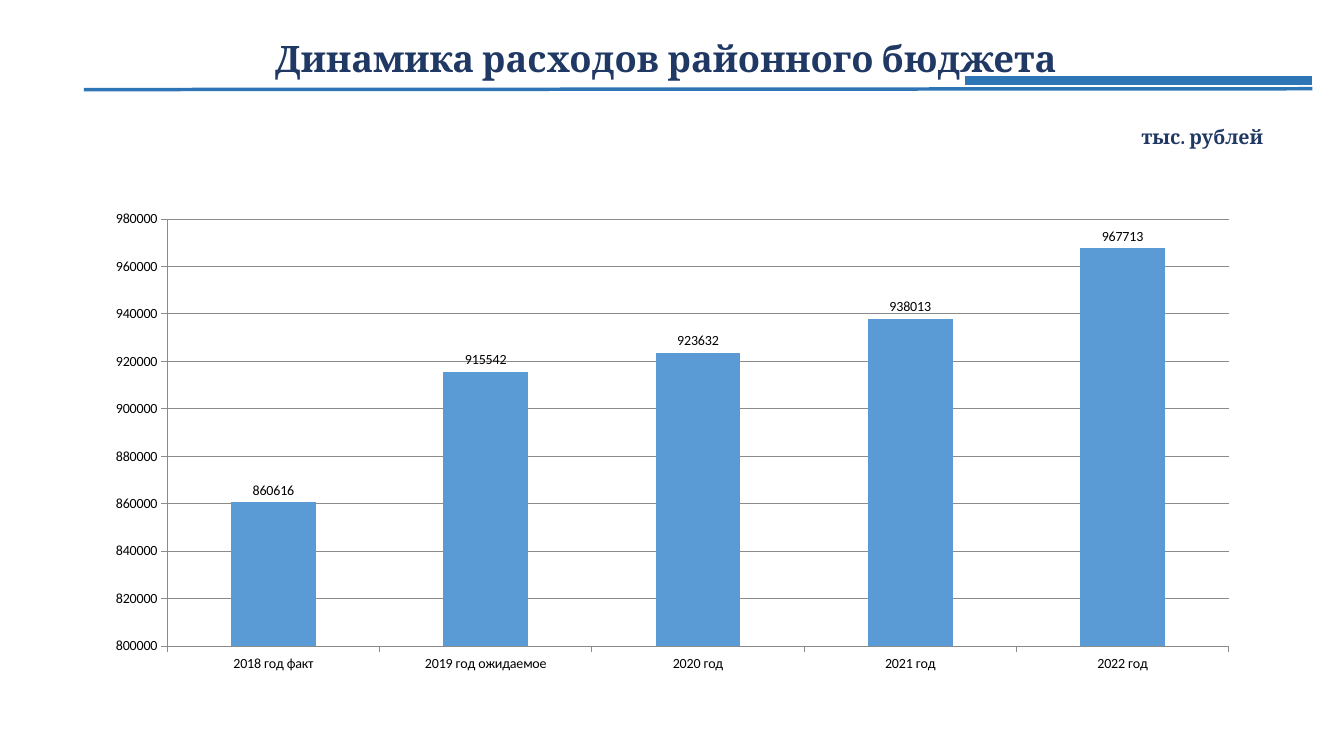
from lxml import etree
from pptx import Presentation
from pptx.chart.data import CategoryChartData
from pptx.dml.color import RGBColor
from pptx.enum.chart import XL_CHART_TYPE as ChartType
from pptx.enum.chart import XL_LABEL_POSITION as LabelPosition
from pptx.enum.chart import XL_TICK_MARK as TickMark
from pptx.enum.shapes import MSO_CONNECTOR as Connector
from pptx.enum.text import MSO_ANCHOR as Anchor
from pptx.enum.text import PP_ALIGN as Align
from pptx.oxml.ns import qn
from pptx.util import Pt


def color(hex_code):
    return RGBColor.from_string(hex_code)


class BudgetSlide:
    heading_font, chart_font = "Cambria", "Calibri"
    navy, blue, bar_blue = "203864", "2E75B6", "5B9BD5"
    black, gray = "000000", "8B8B8B"

    def __init__(self, deck):
        self.page = deck.slides.add_slide(deck.slide_layouts[5])

    def set_text(self, box, text, size, align):
        frame = box.text_frame
        frame.word_wrap = True
        frame.text = text
        para = frame.paragraphs[0]
        para.alignment = align
        span = para.runs[0]
        span.font.name = self.heading_font
        span.font.size = Pt(size)
        span.font.bold = True
        span.font.color.rgb = color(self.navy)
        return para

    def title(self, text, left, top, width, height):
        box = self.page.shapes.title
        box.left, box.top, box.width, box.height = map(Pt, (left, top, width, height))
        para = self.set_text(box, text, 26, Align.CENTER)
        para.line_spacing = 0.9
        box.text_frame.vertical_anchor = Anchor.MIDDLE

    def label(self, text, left, top, width, height):
        box = self.page.shapes.add_textbox(*map(Pt, (left, top, width, height)))
        self.set_text(box, text, 14, Align.RIGHT)

    def rule(self, start_x, start_y, end_x, end_y, weight):
        line = self.page.shapes.add_connector(
            Connector.STRAIGHT, *map(Pt, (start_x, start_y, end_x, end_y)))
        line.line.color.rgb = color(self.blue)
        line.line.width = Pt(weight)
        etree.SubElement(line._element.spPr, qn("a:effectLst"))

    def style_axis(self, axis):
        axis.major_tick_mark = TickMark.OUTSIDE
        axis.minor_tick_mark = TickMark.NONE
        axis.format.line.color.rgb = color(self.gray)
        axis.format.line.width = Pt(0.75)

    def column_chart(self, name, values, left, top, width, height):
        data = CategoryChartData(number_format="General")
        data.categories = list(values)
        data.add_series(name, list(values.values()))
        chart = self.page.shapes.add_chart(
            ChartType.COLUMN_CLUSTERED, *map(Pt, (left, top, width, height)), data).chart
        chart.has_legend = False
        chart.has_title = False
        chart.font.name = self.chart_font
        chart.font.size = Pt(10)
        chart.font.color.rgb = color(self.black)

        # Axes and grid
        for axis in (chart.category_axis, chart.value_axis):
            self.style_axis(axis)
        scale = chart.value_axis
        scale.minimum_scale, scale.maximum_scale, scale.major_unit = 800000, 980000, 20000
        scale.has_major_gridlines = True
        scale.major_gridlines.format.line.color.rgb = color(self.gray)
        scale.major_gridlines.format.line.width = Pt(0.75)

        # Columns and their values
        plot = chart.plots[0]
        plot.gap_width = 150
        plot.vary_by_categories = False
        columns = plot.series[0]
        columns.format.fill.solid()
        columns.format.fill.fore_color.rgb = color(self.bar_blue)
        labels = columns.data_labels
        labels.show_value = True
        labels.position = LabelPosition.OUTSIDE_END


def main():
    deck = Presentation()
    deck.slide_width, deck.slide_height = Pt(960), Pt(540)
    slide = BudgetSlide(deck)

    # Heading and unit
    slide.title("Динамика расходов районного бюджета", 152, 19.5, 648, 47.5)
    slide.label("тыс. рублей", 785, 85.7, 124.5, 24.5)

    # Rules under the heading
    slide.rule(60, 64, 937.5, 63.4, 2.5)
    slide.rule(689, 57.5, 937.5, 57.5, 6)

    # Spending by year
    spending = {
        "2018 год факт": 860616,
        "2019 год ожидаемое": 915542,
        "2020 год": 923632,
        "2021 год": 938013,
        "2022 год": 967713,
    }
    slide.column_chart("Series 1", spending, 66.2, 144, 828, 342.7)
    deck.save("out.pptx")


if __name__ == "__main__":
    main()
